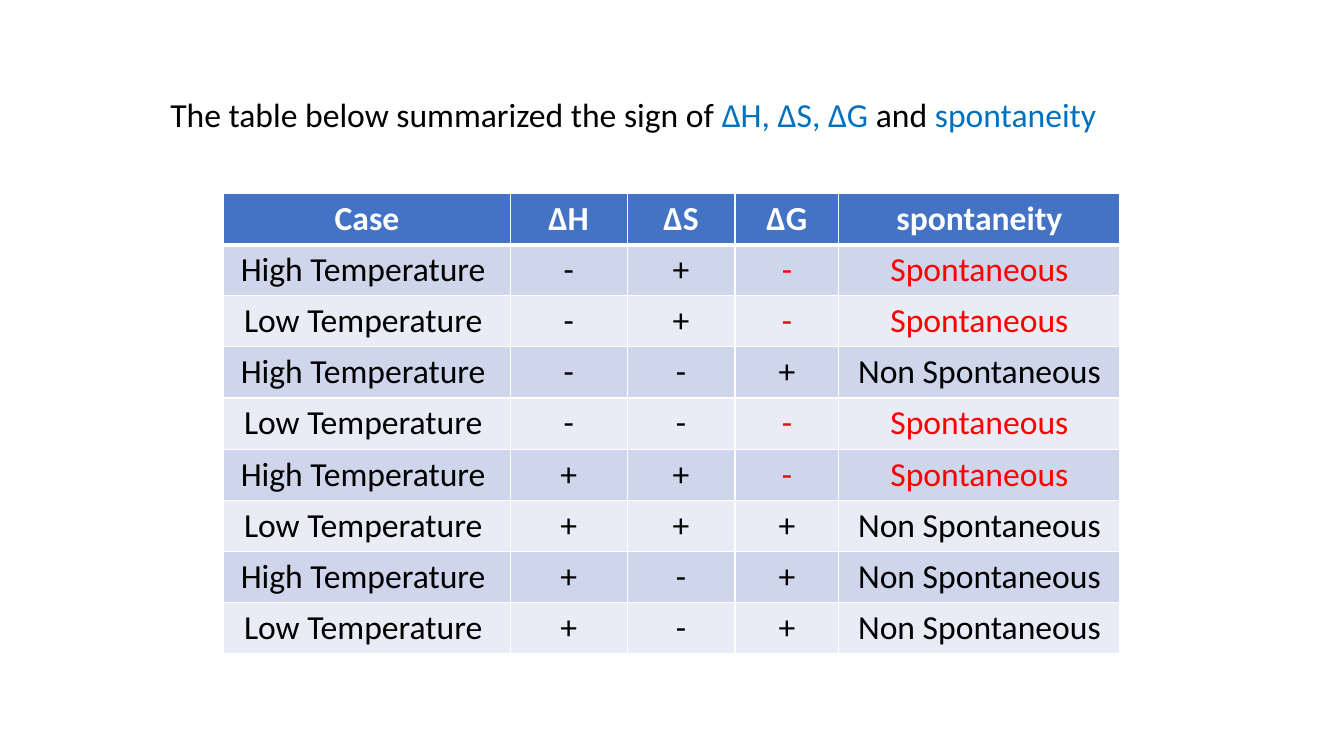
from pptx import Presentation
from pptx.dml.color import RGBColor
from pptx.enum.text import MSO_AUTO_SIZE, PP_ALIGN
from pptx.oxml import parse_xml
from pptx.oxml.ns import nsdecls
from pptx.util import Inches, Pt

CENTER = PP_ALIGN.CENTER
FIT = MSO_AUTO_SIZE.SHAPE_TO_FIT_TEXT
COLORS = {
    "white": "FFFFFF", "black": "000000", "blue": "0070C0", "red": "FF0000",
    "head": "4472C4", "odd": "CFD5EA", "even": "E9EBF5",
}
TITLE = [
    ("The table below summarized the sign of ", "black"),
    ("∆H, ∆S, ∆G ", "blue"),
    ("and ", "black"),
    ("spontaneity", "blue"),
]
HEADS = ["Case", "∆H", "∆S", "∆G", "spontaneity"]
# Signs of ∆H, ∆S and ∆G, with high and low temperature in turn
SIGNS = ["-+-", "-+-", "--+", "---", "++-", "+++", "+-+", "+-+"]
WIDTHS = [2.84, 1.16, 1.07, 1.03, 2.79]
ROW_H = 0.5


def rgb(name):
    return RGBColor.from_string(COLORS[name])


def set_font(font, color, bold=False):
    font.name = "Calibri"
    font.size = Pt(24)
    font.bold = bold
    font.color.rgb = rgb(color)


def add_title(slide):
    box = slide.shapes.add_textbox(
        Inches(1.59), Inches(0.88), Inches(10.15), Inches(0.5))
    frame = box.text_frame
    frame.word_wrap = True
    frame.auto_size = FIT
    for text, color in TITLE:
        run = frame.paragraphs[0].add_run()
        run.text = text
        set_font(run.font, color)


def add_edges(cell, top, bottom):
    props = cell._tc.get_or_add_tcPr()
    edges = [("L", 1), ("R", 1), ("T", top), ("B", bottom)]
    for spot, (side, width) in enumerate(edges):
        props.insert(spot, parse_xml(
            f'<a:ln{side} {nsdecls("a")} w="{Pt(width)}"><a:solidFill>'
            f'<a:srgbClr val="{COLORS["white"]}"/></a:solidFill></a:ln{side}>'))


def fill_cell(cell, text, color, back, bold=False, top=1, bottom=1):
    cell.text = text
    para = cell.text_frame.paragraphs[0]
    para.alignment = CENTER
    set_font(para.font, color, bold)
    cell.fill.solid()
    cell.fill.fore_color.rgb = rgb(back)
    add_edges(cell, top, bottom)


def add_grid(slide):
    count = len(SIGNS) + 1
    table = slide.shapes.add_table(
        count, len(HEADS), Inches(2.22), Inches(1.92),
        Inches(sum(WIDTHS)), Inches(count * ROW_H)).table
    for col, width in zip(table.columns, WIDTHS):
        col.width = Inches(width)

    # Header row
    for col, text in enumerate(HEADS):
        fill_cell(table.cell(0, col), text, "white", "head", True, bottom=3)

    # Body rows: a negative ∆G means spontaneous, shown in red
    for row, signs in enumerate(SIGNS, 1):
        level, back = ("High", "odd") if row % 2 else ("Low", "even")
        free = signs[2] == "-"
        result = "Spontaneous" if free else "Non Spontaneous"
        texts = [f"{level} Temperature ", *signs, result]
        for col, text in enumerate(texts):
            color = "red" if free and col >= 3 else "black"
            fill_cell(table.cell(row, col), text, color, back,
                      top=3 if row == 1 else 1)


def main():
    deck = Presentation()
    deck.slide_width = Inches(13.33)
    deck.slide_height = Inches(7.5)
    slide = deck.slides.add_slide(deck.slide_layouts[6])
    add_grid(slide)
    add_title(slide)
    deck.save("out.pptx")


if __name__ == "__main__":
    main()
